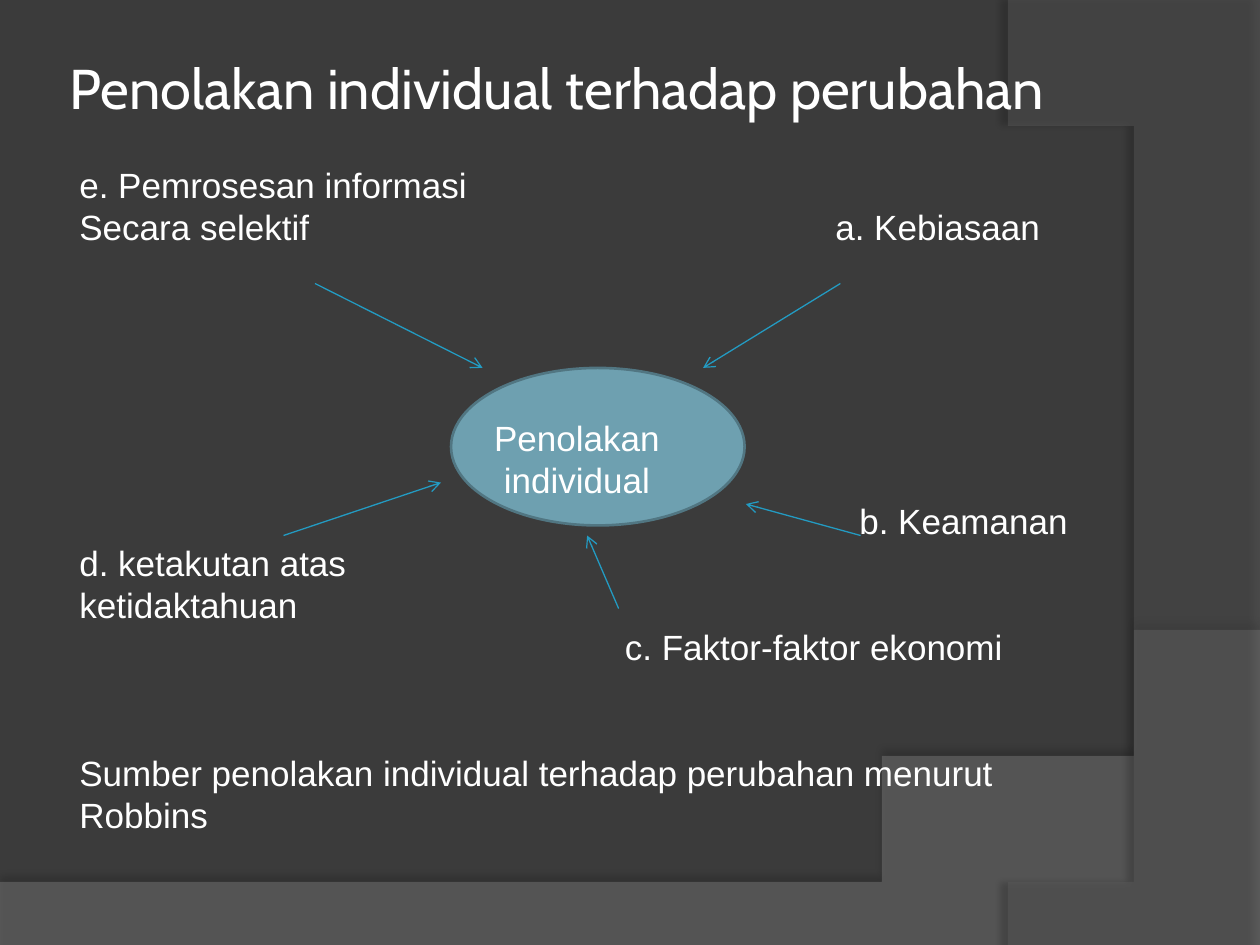
from lxml import etree
from pptx import Presentation
from pptx.dml.color import RGBColor
from pptx.enum import shapes, text
from pptx.oxml.ns import qn
from pptx.util import Inches, Pt

BACKGROUND = RGBColor(0x3B, 0x3B, 0x3B)
WAVE = RGBColor(0x7F, 0x7F, 0x7F)
ARC = RGBColor(0x5E, 0x5E, 0x5E)
WHITE = RGBColor(0xFF, 0xFF, 0xFF)
OVAL = RGBColor(0x6E, 0xA0, 0xB0)
OVAL_EDGE = RGBColor(0x51, 0x76, 0x82)
ARROW = RGBColor(0x23, 0x9B, 0xC2)

LINE_PITCH = Pt(24)
LABELS = [  # left and width in inches, first text row, lines
    (0.63, 4, 0, ["e. Pemrosesan informasi", "Secara selektif"]),
    (6.63, 2, 1, ["a. Kebiasaan"]),
    (6.82, 2, 8, ["b. Keamanan"]),
    (0.63, 3, 9, ["d. ketakutan atas", "ketidaktahuan"]),
    (4.96, 3.5, 11, ["c. Faktor-faktor ekonomi"]),
    (0.63, 7.94, 14,
     ["Sumber penolakan individual terhadap perubahan menurut Robbins"]),
]
ARROWS = [
    ((2.5, 2.25), (3.83, 2.92)),
    ((6.67, 2.25), (5.58, 2.92)),
    ((2.25, 4.25), (3.5, 3.83)),
    ((4.91, 4.83), (4.66, 4.25)),
    ((6.83, 4.25), (5.92, 4)),
]


def bezier(start, control_1, control_2, end, steps=48):
    """Return points along a cubic curve, without its start."""
    points = []
    for step in range(1, steps + 1):
        t = step / steps
        weights = ((1 - t) ** 3, 3 * t * (1 - t) ** 2, 3 * t * t * (1 - t), t ** 3)
        corners = (start, control_1, control_2, end)
        points.append(tuple(sum(w * c[axis] for w, c in zip(weights, corners))
                            for axis in (0, 1)))
    return points


def add_backdrop(page, points, color, opacity, shadow_opacity, distance, direction):
    """Draw a translucent outline with a soft shadow; percentages and degrees."""
    builder = page.shapes.build_freeform(*points[0], scale=Inches(1))
    builder.add_line_segments(points[1:], close=True)
    panel = builder.convert_to_shape()
    panel.fill.solid()
    panel.fill.fore_color.rgb = color
    panel.line.fill.background()
    panel.shadow.inherit = False
    properties = panel._element.spPr
    fill = properties.find(qn("a:solidFill"))[0]
    etree.SubElement(fill, qn("a:alpha"), val=str(opacity * 1000))
    shadow = etree.SubElement(
        properties.find(qn("a:effectLst")), qn("a:outerShdw"), blurRad=str(Pt(4)),
        dist=str(Pt(distance)), dir=str(direction * 60000), rotWithShape="0")
    black = etree.SubElement(shadow, qn("a:srgbClr"), val="000000")
    etree.SubElement(black, qn("a:alpha"), val=str(shadow_opacity * 1000))


def add_background(page):
    page.background.fill.solid()
    page.background.fill.fore_color.rgb = BACKGROUND
    wave = [(0, 7.05), (0, 7.5), (10, 7.5), (10, 5.2)]
    wave += bezier(wave[-1], (5.59, 7.29), (3.91, 7.19), wave[0])
    add_backdrop(page, wave, WAVE, 45, 35, 3.5, 270)
    arc = [(10, 0.02), (10, 7.5), (8.21, 7.5)]
    arc += bezier(arc[-1], (9.35, 6.19), (10.18, 3), (8, 0))
    add_backdrop(page, arc, ARC, 40, 45, 4, 180)


def write_lines(frame, lines, align=text.PP_ALIGN.LEFT):
    for index, line in enumerate(lines):
        para = frame.paragraphs[0] if index == 0 else frame.add_paragraph()
        para.text = line
        para.alignment = align
        para.line_spacing = LINE_PITCH
        para.font.name = "Arial"
        para.font.size = Pt(20)
        para.font.color.rgb = WHITE


def add_title(page, left, top, width, height):
    box = page.shapes.add_textbox(left, top, width, height)
    frame = box.text_frame
    frame.word_wrap = True
    frame.vertical_anchor = text.MSO_ANCHOR.MIDDLE
    frame.margin_left = frame.margin_right = Inches(0.05)
    para = frame.paragraphs[0]
    para.text = "Penolakan individual terhadap perubahan"
    para.font.name = "Cabin"
    para.font.size = Pt(32)
    para.font.color.rgb = WHITE


def add_oval(page, left, top, width, height):
    oval = page.shapes.add_shape(shapes.MSO_SHAPE.OVAL, left, top, width, height)
    oval.shadow.inherit = False
    oval.fill.solid()
    oval.fill.fore_color.rgb = OVAL
    oval.line.color.rgb = OVAL_EDGE
    oval.line.width = Pt(1.5)
    frame = oval.text_frame
    frame.word_wrap = False
    frame.vertical_anchor = text.MSO_ANCHOR.MIDDLE
    frame.margin_left = frame.margin_bottom = 0
    frame.margin_right = Inches(0.33)
    frame.margin_top = Inches(0.19)
    write_lines(frame, ["Penolakan", "individual"], text.PP_ALIGN.CENTER)


def add_labels(page, top):
    for left, width, row, lines in LABELS:
        box = page.shapes.add_textbox(
            Inches(left), top + row * LINE_PITCH, Inches(width), 2 * LINE_PITCH)
        frame = box.text_frame
        frame.word_wrap = True
        frame.margin_left = frame.margin_right = 0
        frame.margin_top = frame.margin_bottom = 0
        write_lines(frame, lines)


def add_arrow(page, start, end):
    arrow = page.shapes.add_connector(
        shapes.MSO_CONNECTOR.STRAIGHT, *map(Inches, start + end))
    arrow.line.color.rgb = ARROW
    arrow.line.width = Pt(0.75)
    etree.SubElement(arrow.line._get_or_add_ln(), qn("a:tailEnd"), type="arrow")
    etree.SubElement(arrow._element.spPr, qn("a:effectLst"))


def main():
    deck = Presentation()
    deck.slide_width, deck.slide_height = Inches(10), Inches(7.5)
    page = deck.slides.add_slide(deck.slide_layouts[6])
    add_background(page)
    add_title(page, Inches(0.5), Inches(0.3), Inches(8.17), Inches(0.78))
    add_oval(page, Inches(3.58), Inches(2.92), Inches(2.33), Inches(1.25))
    add_labels(page, Inches(1.3))
    for start, end in ARROWS:
        add_arrow(page, start, end)
    deck.save("out.pptx")


if __name__ == "__main__":
    main()
